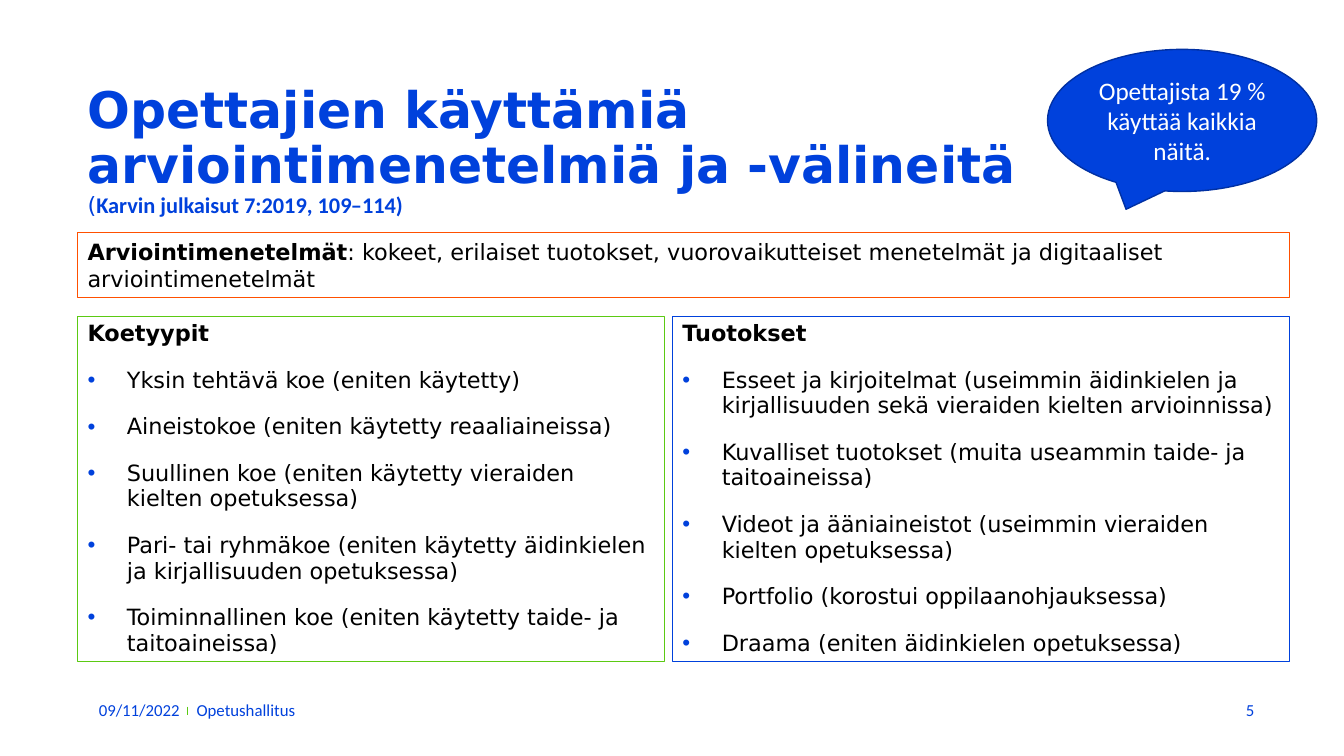
from dataclasses import dataclass

from lxml.etree import SubElement
from pptx import Presentation
from pptx.dml.color import RGBColor
from pptx.enum.shapes import MSO_CONNECTOR, MSO_SHAPE
from pptx.enum.text import MSO_ANCHOR, PP_ALIGN
from pptx.oxml.ns import qn
from pptx.util import Inches, Pt


@dataclass(frozen=True)
class Theme:
    blue: str = "0041DC"
    dark_blue: str = "0030A3"
    green: str = "5BCA13"
    orange: str = "FF5000"
    black: str = "000000"
    white: str = "FFFFFF"
    heading_font: str = "DejaVu Sans"
    small_font: str = "Calibri"
    title_size: int = 36
    callout_size: int = 18
    body_size: int = 16
    footer_size: int = 12


THEME = Theme()
LEFT, RIGHT = 0.77, 12.79
COLUMN_TOP, COLUMN_HEIGHT = 3.14, 3.42
BULLET_INDENT = 0.39

EXAM_TYPES = [
    "Yksin tehtävä koe (eniten käytetty)",
    "Aineistokoe (eniten käytetty reaaliaineissa)",
    "Suullinen koe (eniten käytetty vieraiden kielten opetuksessa)",
    "Pari- tai ryhmäkoe (eniten käytetty äidinkielen ja kirjallisuuden opetuksessa)",
    "Toiminnallinen koe (eniten käytetty taide- ja taitoaineissa)",
]
OUTPUTS = [
    "Esseet ja kirjoitelmat (useimmin äidinkielen ja kirjallisuuden sekä vieraiden kielten arvioinnissa)",
    "Kuvalliset tuotokset (muita useammin taide- ja taitoaineissa)",
    "Videot ja ääniaineistot (useimmin vieraiden kielten opetuksessa)",
    "Portfolio (korostui oppilaanohjauksessa)",
    "Draama (eniten äidinkielen opetuksessa)",
]


def style(font, size, color, name=THEME.heading_font, bold=False):
    font.size, font.name, font.bold = Pt(size), name, bold
    font.color.rgb = RGBColor.from_string(color)


def add_panel(slide, kind, box, line_color, line_width=0.75, fill=None):
    """Add an outlined shape and return its text frame."""
    panel = slide.shapes.add_shape(kind, *map(Inches, box))
    panel.shadow.inherit = False
    panel.line.color.rgb = RGBColor.from_string(line_color)
    panel.line.width = Pt(line_width)
    if fill:
        panel.fill.solid()
        panel.fill.fore_color.rgb = RGBColor.from_string(fill)
    else:
        panel.fill.background()
    frame = panel.text_frame
    frame.word_wrap = True
    frame.vertical_anchor = MSO_ANCHOR.TOP
    return frame


def add_title(slide, heading, opening, citation):
    box = slide.shapes.add_textbox(Inches(LEFT), Inches(0.78), Inches(11.5), Inches(1.45))
    frame = box.text_frame
    frame.word_wrap = True
    frame.vertical_anchor = MSO_ANCHOR.MIDDLE
    title = frame.paragraphs[0]
    title.line_spacing = 0.9
    for line in heading:
        run = title.add_run()
        run.text = line
        style(run.font, THEME.title_size, THEME.blue, bold=True)
        title.add_line_break()
    for text, name, bold in [(opening, THEME.heading_font, False),
                             (citation, THEME.small_font, True)]:
        run = title.add_run()
        run.text = text
        style(run.font, THEME.body_size, THEME.blue, name, bold)


def add_bullet(paragraph):
    properties = paragraph._p.get_or_add_pPr()
    properties.set("marL", str(Inches(BULLET_INDENT)))
    properties.set("indent", str(-Inches(BULLET_INDENT)))
    color = SubElement(properties, qn("a:buClr"))
    SubElement(color, qn("a:srgbClr"), val=THEME.blue)
    SubElement(properties, qn("a:buFont"), typeface="Arial")
    SubElement(properties, qn("a:buChar"), char="•")


def add_column(slide, left, width, line_color, heading, items):
    frame = add_panel(slide, MSO_SHAPE.RECTANGLE,
                      (left, COLUMN_TOP, width, COLUMN_HEIGHT), line_color)
    for index, text in enumerate([heading, *items]):
        paragraph = frame.add_paragraph() if index else frame.paragraphs[0]
        paragraph.text = text
        paragraph.alignment = PP_ALIGN.LEFT
        paragraph.line_spacing = 0.95
        paragraph.space_after = Pt(15)
        if index:
            add_bullet(paragraph)
        style(paragraph.font, THEME.body_size, THEME.black, bold=index == 0)


def add_summary(slide, term, explanation):
    frame = add_panel(slide, MSO_SHAPE.RECTANGLE,
                      (LEFT, 2.31, RIGHT - LEFT, 0.64), THEME.orange)
    summary = frame.paragraphs[0]
    summary.alignment = PP_ALIGN.LEFT
    for text, bold in [(term, True), (explanation, False)]:
        run = summary.add_run()
        run.text = text
        style(run.font, THEME.body_size, THEME.black, bold=bold)


def add_callout(slide, text):
    frame = add_panel(slide, MSO_SHAPE.OVAL_CALLOUT, (10.39, 0.49, 2.67, 1.41),
                      THEME.dark_blue, 1, THEME.blue)
    frame.vertical_anchor = MSO_ANCHOR.MIDDLE
    message = frame.paragraphs[0]
    message.text = text
    message.alignment = PP_ALIGN.CENTER
    style(message.font, THEME.callout_size, THEME.white, THEME.small_font)


def add_footer_text(slide, left, width, text, alignment=PP_ALIGN.LEFT):
    box = slide.shapes.add_textbox(Inches(left), Inches(6.9), Inches(width), Inches(0.29))
    frame = box.text_frame
    frame.word_wrap = True
    frame.margin_left = frame.margin_right = frame.margin_top = frame.margin_bottom = 0
    frame.vertical_anchor = MSO_ANCHOR.MIDDLE
    paragraph = frame.paragraphs[0]
    paragraph.text = text
    paragraph.alignment = alignment
    style(paragraph.font, THEME.footer_size, THEME.blue, THEME.small_font)


def add_footer_divider(slide):
    divider = slide.shapes.add_connector(
        MSO_CONNECTOR.STRAIGHT, Inches(1.86), Inches(7.01), Inches(1.86), Inches(7.09))
    divider.line.color.rgb = RGBColor.from_string(THEME.green)
    divider.line.width = Pt(1.25)
    SubElement(divider._element.spPr, qn("a:effectLst"))


def main():
    deck = Presentation()
    deck.slide_width, deck.slide_height = Inches(13.33), Inches(7.5)
    slide = deck.slides.add_slide(deck.slide_layouts[6])

    add_footer_divider(slide)
    add_title(slide, ["Opettajien käyttämiä ", "arviointimenetelmiä ja -välineitä"],
              "(", "Karvin julkaisut 7:2019, 109 ̶ 114)")
    add_column(slide, LEFT, 5.82, THEME.green, "Koetyypit", EXAM_TYPES)
    add_column(slide, 6.67, RIGHT - 6.67, THEME.blue, "Tuotokset", OUTPUTS)
    add_footer_text(slide, 0.98, 0.97, "09/11/2022")
    add_footer_text(slide, 1.95, 4.73, "Opetushallitus")
    add_footer_text(slide, 11.54, 0.9, "5", PP_ALIGN.RIGHT)
    add_summary(slide, "Arviointimenetelmät",
                ": kokeet, erilaiset tuotokset, vuorovaikutteiset menetelmät "
                "ja digitaaliset arviointimenetelmät")
    add_callout(slide, "Opettajista 19 % käyttää kaikkia näitä.")

    deck.save("out.pptx")


if __name__ == "__main__":
    main()
